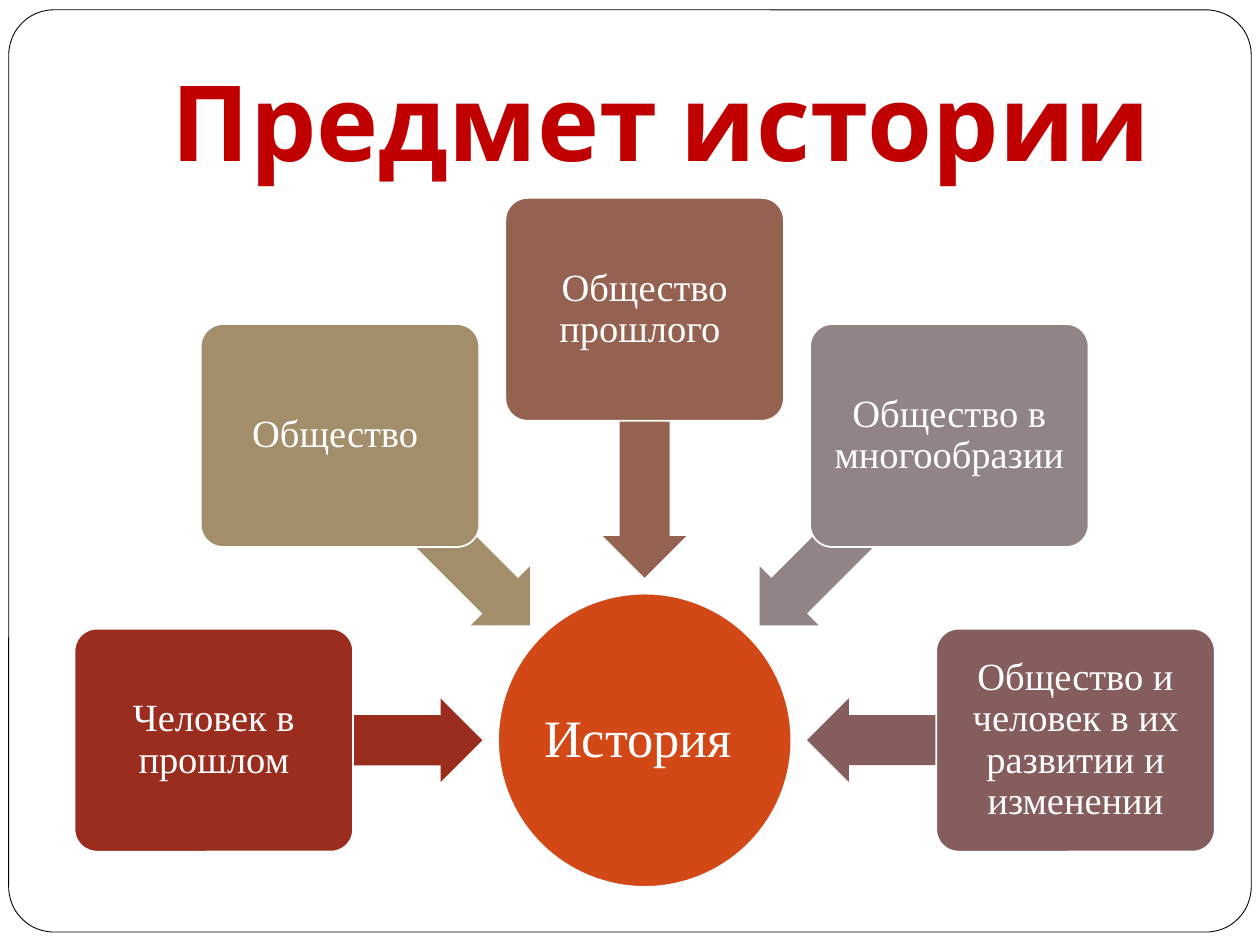
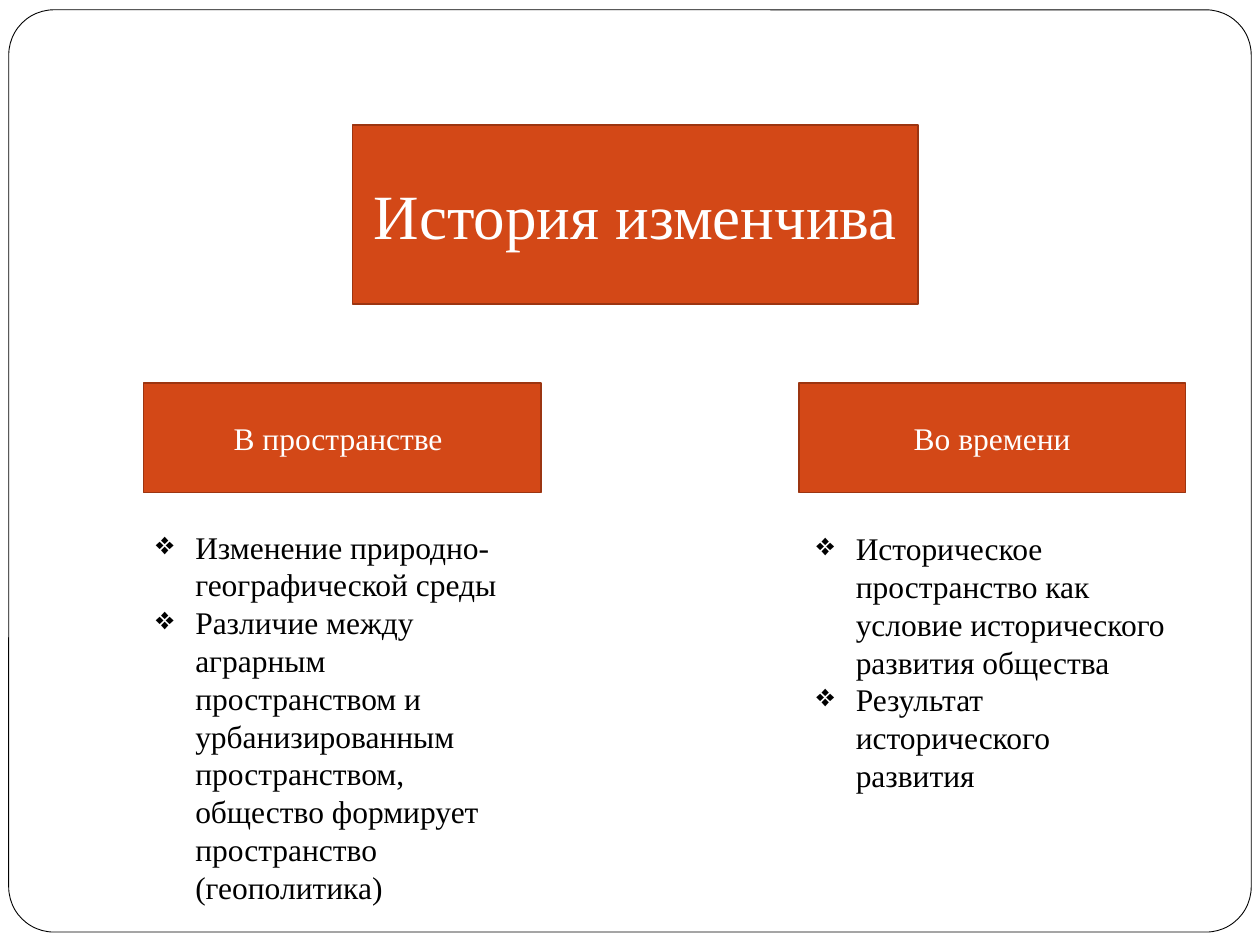
import math
from dataclasses import dataclass

import lxml.etree
import pptx
import pptx.dml.color
import pptx.enum.shapes
import pptx.enum.text
import pptx.oxml.ns
import pptx.util

Pt = pptx.util.Pt
SHAPES = pptx.enum.shapes.MSO_SHAPE
ANCHOR = pptx.enum.text.MSO_ANCHOR
ALIGN = pptx.enum.text.PP_ALIGN
AUTO_SIZE = pptx.enum.text.MSO_AUTO_SIZE

COLOURS = {
    "paper": "FFFFFF",
    "ink": "000000",
    "title": "C00000",
    "accent": "D34817",
    "accent_edge": "9C3511",
    "brick": "9B2D1F",
    "sand": "A28E6A",
    "clay": "956251",
    "stone": "918485",
    "plum": "855D5D",
}
BODY_FONT = "Times New Roman"
TITLE_FONT = "Cabin"
DEFAULT_INSETS = (7.2, 3.6, 7.2, 3.6)


@dataclass
class Area:
    left: float
    top: float
    width: float
    height: float

    def lengths(self) -> list:
        return [Pt(value) for value in (self.left, self.top, self.width, self.height)]


@dataclass
class TextStyle:
    size: float
    colour: str = "paper"
    font: str = BODY_FONT
    bold: bool = False
    align: ALIGN = ALIGN.CENTER
    anchor: ANCHOR = ANCHOR.MIDDLE
    spacing: float = 1.0
    insets: tuple = DEFAULT_INSETS
    bullet: str = ""


@dataclass
class Aspect:
    text: str
    colour: str


@dataclass
class Column:
    heading: str
    heading_area: Area
    points: list
    points_area: Area


def centred(x: float, y: float, width: float, height: float) -> Area:
    return Area(x - width / 2, y - height / 2, width, height)


def rgb(name: str):
    return pptx.dml.color.RGBColor.from_string(COLOURS[name])


def apply(target, values: dict) -> None:
    for name, value in values.items():
        setattr(target, name, value)


def add_bullet(para, symbol: str, indent: float = 22.5) -> None:
    properties = para._p.get_or_add_pPr()
    properties.set("marL", str(Pt(indent)))
    properties.set("indent", str(-Pt(indent)))
    mark = lxml.etree.SubElement(properties, pptx.oxml.ns.qn("a:buChar"))
    mark.set("char", symbol)


def write(box, lines: list, style: TextStyle) -> None:
    frame = box.text_frame
    left, top, right, bottom = style.insets
    apply(frame, {
        "word_wrap": True, "vertical_anchor": style.anchor,
        "margin_left": Pt(left), "margin_top": Pt(top),
        "margin_right": Pt(right), "margin_bottom": Pt(bottom),
    })
    for index, line in enumerate(lines):
        para = frame.paragraphs[0] if index == 0 else frame.add_paragraph()
        apply(para, {"alignment": style.align, "line_spacing": style.spacing})
        if style.bullet:
            add_bullet(para, style.bullet)
        span = para.add_run()
        span.text = line
        apply(span.font, {"name": style.font, "size": Pt(style.size), "bold": style.bold})
        span.font.color.rgb = rgb(style.colour)


def add_shape(page, kind: SHAPES, area: Area, fill: str, edge: str = "",
              edge_width: float = 1, adjustments: tuple = (), rotation: float = 0):
    shape = page.shapes.add_shape(kind, *area.lengths())
    shape.shadow.inherit = False
    shape.rotation = rotation
    for index, value in enumerate(adjustments):
        shape.adjustments[index] = value
    shape.fill.solid()
    shape.fill.fore_color.rgb = rgb(fill)
    if edge:
        shape.line.color.rgb = rgb(edge)
        shape.line.width = Pt(edge_width)
    else:
        shape.line.fill.background()
    return shape


def add_text(page, area: Area, lines: list, style: TextStyle):
    box = page.shapes.add_textbox(*area.lengths())
    write(box, lines, style)
    return box


def add_page(deck):
    """Blank page with the shared rounded frame."""
    page = deck.slides.add_slide(deck.slide_layouts[6])
    add_shape(page, SHAPES.ROUNDED_RECTANGLE, Area(5, 5.6, 710, 527),
              "paper", "ink", 0.5, (0.049,))
    return page


# Slide 1: five aspects pointing at the hub
HUB_X, HUB_Y, HUB_SIZE = 368.4, 423, 167.6
ARROW_RADIUS, CARD_RADIUS = 169.5, 246.2
TITLE_STYLE = TextStyle(60, "title", TITLE_FONT, bold=True, anchor=ANCHOR.BOTTOM,
                        insets=(7.2, 3.6, 7.2, 7.2))
HUB_STYLE = TextStyle(30, spacing=0.9, insets=(1.5,) * 4)
CARD_STYLE = TextStyle(22, spacing=0.9, insets=(3.5,) * 4)
ASPECTS = [
    Aspect("Человек в прошлом", "brick"),
    Aspect("Общество ", "sand"),
    Aspect("Общество прошлого ", "clay"),
    Aspect("Общество в многообразии", "stone"),
    Aspect("Общество и человек в их развитии и изменении", "plum"),
]


def on_ring(angle: float, radius: float, width: float, height: float) -> Area:
    turn = math.radians(angle)
    return centred(HUB_X + radius * math.cos(turn), HUB_Y + radius * math.sin(turn),
                   width, height)


def build_subject_page(deck) -> None:
    page = add_page(deck)
    add_text(page, Area(72, 21.6, 612, 90), ["Предмет истории"], TITLE_STYLE)
    hub = add_shape(page, SHAPES.OVAL, centred(HUB_X, HUB_Y, HUB_SIZE, HUB_SIZE),
                    "accent", "paper")
    write(hub, ["История "], HUB_STYLE)
    for index, aspect in enumerate(ASPECTS):
        angle = 180 + 45 * index
        add_shape(page, SHAPES.LEFT_ARROW, on_ring(angle, ARROW_RADIUS, 153.4, 47.8),
                  aspect.colour, adjustments=(0.6, 0.5), rotation=angle % 360)
        card = add_shape(page, SHAPES.ROUNDED_RECTANGLE,
                         on_ring(angle, CARD_RADIUS, 159.2, 127.4),
                         aspect.colour, "paper", adjustments=(0.1,))
        write(card, [aspect.text], CARD_STYLE)


# Slide 2: change in space and in time
POINTS_STYLE = TextStyle(18, "ink", align=ALIGN.LEFT, anchor=ANCHOR.TOP, bullet="❖")
COLUMNS = [
    Column("В пространстве ", Area(82, 219, 227, 62.5),
           ["Изменение природно-географической среды",
            "Различие между аграрным пространством и урбанизированным пространством, "
            "общество формирует пространство (геополитика)"],
           Area(82, 298, 227, 225.4)),
    Column("Во времени", Area(456.5, 219, 221, 62.5),
           ["Историческое пространство как условие исторического развития общества",
            "Результат исторического развития"],
           Area(459.4, 298.8, 215.3, 181.4)),
]


def add_banner(page, area: Area, text: str, size: float) -> None:
    banner = add_shape(page, SHAPES.RECTANGLE, area, "accent", "accent_edge")
    write(banner, [text], TextStyle(size))


def build_change_page(deck) -> None:
    page = add_page(deck)
    add_banner(page, Area(201.4, 71.4, 323.4, 102.2), "История изменчива", 36)
    for column in COLUMNS:
        add_banner(page, column.heading_area, column.heading, 18)
        points = add_text(page, column.points_area, column.points, POINTS_STYLE)
        points.text_frame.auto_size = AUTO_SIZE.SHAPE_TO_FIT_TEXT


def main() -> None:
    deck = pptx.Presentation()
    apply(deck, {"slide_width": Pt(720), "slide_height": Pt(540)})
    build_subject_page(deck)
    build_change_page(deck)
    deck.save("out.pptx")


if __name__ == "__main__":
    main()
